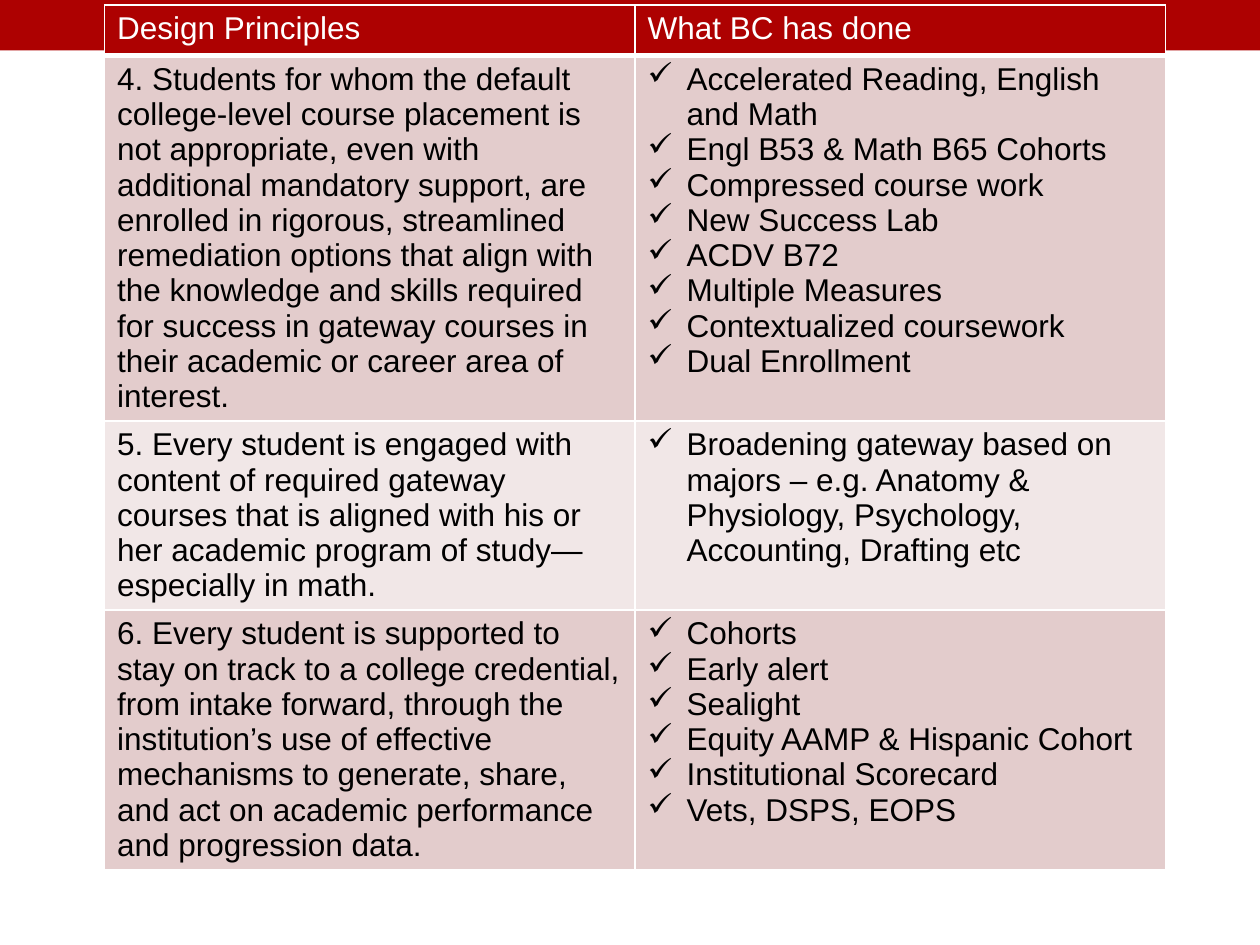
from dataclasses import dataclass

from lxml import etree
from pptx import Presentation
from pptx.dml.color import RGBColor
from pptx.enum.shapes import MSO_SHAPE
from pptx.oxml.ns import qn
from pptx.util import Inches, Pt

RECTANGLE = MSO_SHAPE.RECTANGLE
BLANK_LAYOUT = 6
SLIDE_WIDTH, SLIDE_HEIGHT = Inches(10), Inches(7.5)


@dataclass(frozen=True)
class Theme:
    font: str = "Arial"
    text_size: float = 18
    accent: str = "AD0101"
    bands: tuple = ("E3CCCC", "F1E7E7")
    header_text: str = "FFFFFF"
    body_text: str = "000000"
    rule: str = "FFFFFF"
    thin: float = 1
    thick: float = 3
    bullet: str = "✓"
    indent: float = 0.31


HEADINGS = ("Design Principles", "What BC has done")
PRINCIPLES = [
    ("4. Students for whom the default college-level course placement is not "
     "appropriate, even with additional mandatory support, are enrolled in "
     "rigorous, streamlined remediation options that align with the knowledge "
     "and skills required for success in gateway courses in their academic or "
     "career area of interest.",
     ["Accelerated Reading, English and Math", "Engl B53 & Math B65 Cohorts",
      "Compressed course work", "New Success Lab", "ACDV B72",
      "Multiple Measures", "Contextualized coursework", "Dual Enrollment"]),
    ("5. Every student is engaged with content of required gateway courses "
     "that is aligned with his or her academic program of study—especially "
     "in math.",
     ["Broadening gateway based on majors – e.g. Anatomy & Physiology, "
      "Psychology, Accounting, Drafting etc"]),
    ("6. Every student is supported to stay on track to a college credential, "
     "from intake forward, through the institution’s use of effective "
     "mechanisms to generate, share, and act on academic performance and "
     "progression data.",
     ["Cohorts", "Early alert", "Sealight", "Equity AAMP & Hispanic Cohort",
      "Institutional Scorecard", "Vets, DSPS, EOPS"]),
]
ROW_HEIGHTS = (0.4, 2.9, 1.5, 2.06)


class SlideBuilder:
    def __init__(self, page, theme):
        self.page = page
        self.theme = theme

    def top_band(self, share):
        """Fill the given share of the slide's height from its top edge."""
        band = self.page.shapes.add_shape(
            RECTANGLE, 0, 0, SLIDE_WIDTH, round(SLIDE_HEIGHT * share))
        band.shadow.inherit = False
        band.fill.solid()
        band.fill.fore_color.rgb = RGBColor.from_string(self.theme.accent)
        band.line.fill.background()

    def table(self, left, top, width, headings, rows, heights):
        """Place a table by shares of the slide, with row heights in inches."""
        theme = self.theme
        grid = self.page.shapes.add_table(
            len(rows) + 1, len(headings),
            round(SLIDE_WIDTH * left), round(SLIDE_HEIGHT * top),
            round(SLIDE_WIDTH * width), Inches(sum(heights))).table
        for row, height in zip(grid.rows, heights):
            row.height = Inches(height)
        for column, heading in enumerate(headings):
            self.cell(grid.cell(0, column), [heading], theme.accent,
                      theme.header_text, bottom=theme.thick)
        for number, (principle, actions) in enumerate(rows, start=1):
            fill = theme.bands[(number - 1) % len(theme.bands)]
            top_rule = theme.thick if number == 1 else theme.thin
            self.cell(grid.cell(number, 0), [principle], fill,
                      theme.body_text, top=top_rule)
            self.cell(grid.cell(number, 1), actions, fill,
                      theme.body_text, top=top_rule, bulleted=True)

    def cell(self, cell, lines, fill, color, top=None, bottom=None, bulleted=False):
        self.borders(cell, top or self.theme.thin, bottom or self.theme.thin)
        cell.fill.solid()
        cell.fill.fore_color.rgb = RGBColor.from_string(fill)
        cell.text = "\n".join(lines)
        for paragraph in cell.text_frame.paragraphs:
            font = paragraph.font
            font.name = self.theme.font
            font.size = Pt(self.theme.text_size)
            font.bold = False
            font.color.rgb = RGBColor.from_string(color)
            if bulleted:
                self.bullet(paragraph)

    def borders(self, cell, top, bottom):
        properties = cell._tc.get_or_add_tcPr()
        thin = self.theme.thin
        for side, weight in (("L", thin), ("R", thin), ("T", top), ("B", bottom)):
            line = etree.SubElement(properties, qn(f"a:ln{side}"), w=str(Pt(weight)))
            paint = etree.SubElement(line, qn("a:solidFill"))
            etree.SubElement(paint, qn("a:srgbClr"), val=self.theme.rule)

    def bullet(self, paragraph):
        properties = paragraph._p.get_or_add_pPr()
        indent = Inches(self.theme.indent)
        properties.set("marL", str(indent))
        properties.set("indent", str(-indent))
        mark = etree.Element(qn("a:buChar"), char=self.theme.bullet)
        properties.find(qn("a:defRPr")).addprevious(mark)


def main():
    deck = Presentation()
    deck.slide_width, deck.slide_height = SLIDE_WIDTH, SLIDE_HEIGHT
    page = deck.slides.add_slide(deck.slide_layouts[BLANK_LAYOUT])
    builder = SlideBuilder(page, Theme())
    builder.top_band(0.4 / 7.5)
    builder.table(0.083, 0.04 / 7.5, 0.842, HEADINGS, PRINCIPLES, ROW_HEIGHTS)
    deck.save("out.pptx")


if __name__ == "__main__":
    main()
